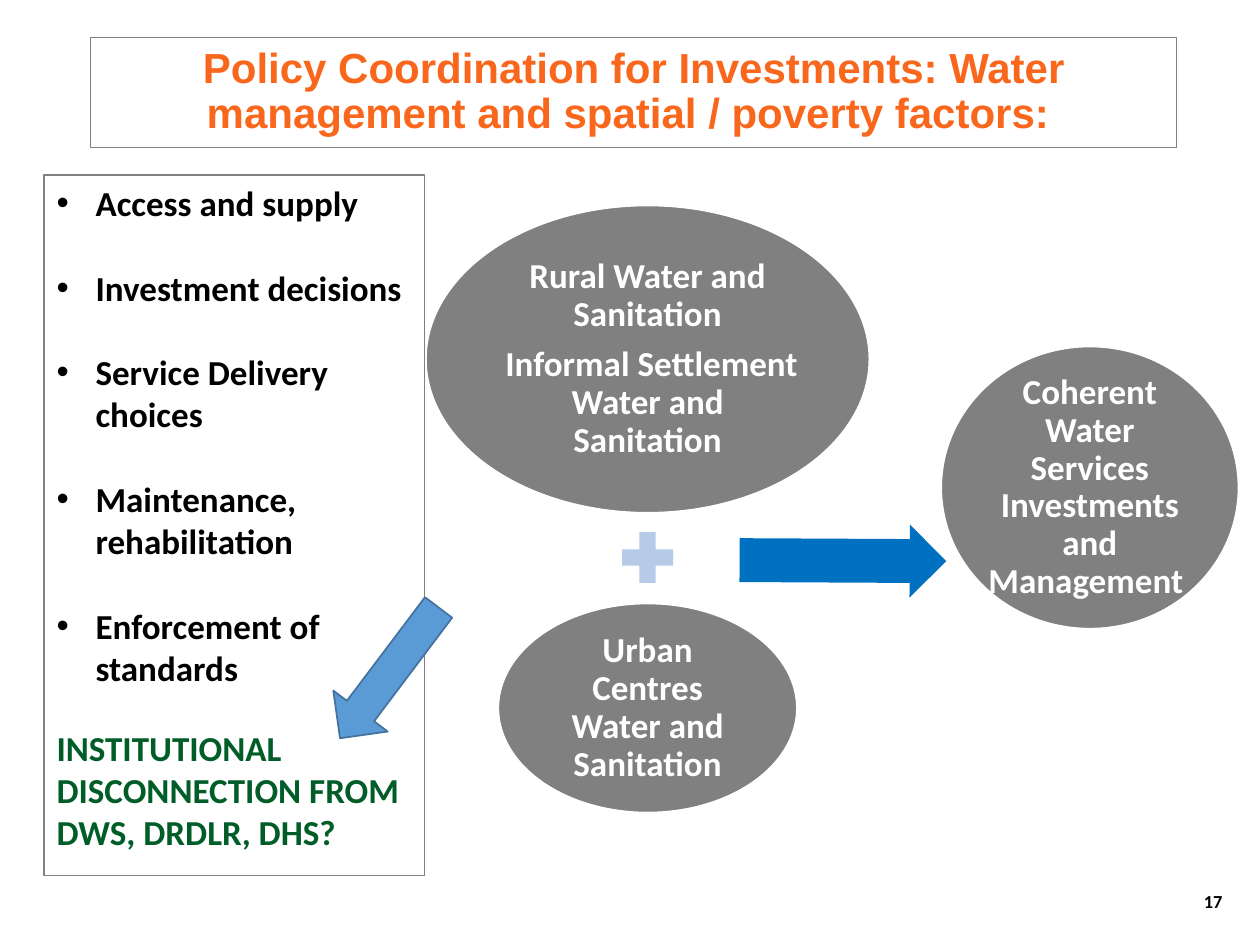
"""Build the slide on policy coordination for water investments."""
from lxml.etree import SubElement
from pptx import Presentation
from pptx.dml.color import RGBColor
from pptx.enum.shapes import MSO_SHAPE as Shape
from pptx.enum.text import MSO_ANCHOR as Anchor, PP_ALIGN as Align
from pptx.oxml.ns import qn
from pptx.util import Inches, Pt

COLORS = {
    "orange": "F9671C", "green": "005D28", "black": "000000", "white": "FFFFFF",
    "gray": "808080", "pale": "B5CBE7", "blue": "0070C0", "sky": "5B9BD5", "navy": "43739E",
}
TITLE = "Policy Coordination for Investments: Water management and spatial / poverty factors: "
ISSUES = [
    "Access and supply",
    "Investment decisions",
    "Service Delivery choices",
    "Maintenance, rehabilitation",
    "Enforcement of standards",
]
QUESTION = "INSTITUTIONAL DISCONNECTION FROM DWS, DRDLR, DHS?"
PAGE = "17"

WIDTH, HEIGHT = 10, 7.5
MIDDLE = 51.4
TITLE_AREA = (7.2, 4, 86.2, 11.6)
ISSUES_AREA = (3.5, 18.53, 30.2, 74.13)
PAGE_AREA = (93.5, 92.67, 4.5, 5.33)
SERVICES = [
    ((MIDDLE, 38), (35.2, 32.53),
     ["Rural Water and Sanitation", " Informal Settlement Water and Sanitation"]),
    ((MIDDLE, 74.93), (23.7, 22.13), ["Urban Centres Water and Sanitation"]),
    ((86.5, 51.6), (23.6, 29.87), ["Coherent Water Services Investments and Management "]),
]
SIGNS = [
    (Shape.MATH_PLUS, (MIDDLE, 59), (5.5, 7.33), 0, "pale", None),
    (Shape.RIGHT_ARROW, (66.9, 59.33), (16.4, 7.73), 0.3, "blue", None),
    (Shape.DOWN_ARROW, (30.9, 71.2), (5.4, 17.33), 37, "sky", "navy"),
]

LINE_GAP = 24.4
HANG = Inches(0.31)
BODY = {"name": "Calibri", "size": Pt(20), "bold": True}
HEADING = {"name": "Arial", "size": Pt(24), "bold": True}
NUMBER = {"name": "Calibri", "size": Pt(10.5), "bold": True}
CENTERED = {"alignment": Align.CENTER, "line_spacing": 0.9}
SIDES = ("margin_left", "margin_top", "margin_right", "margin_bottom")


def apply(target, values):
    for key, value in values.items():
        setattr(target, key, value)


def color(name):
    return RGBColor.from_string(COLORS[name])


def around(center, size):
    return (center[0] - size[0] / 2, center[1] - size[1] / 2, *size)


def place(slide, kind, area, fill=None, line=None, weight=1):
    left, top, width, height = area
    shape = slide.shapes.add_shape(
        kind,
        Inches(WIDTH * left / 100), Inches(HEIGHT * top / 100),
        Inches(WIDTH * width / 100), Inches(HEIGHT * height / 100),
    )
    shape.shadow.inherit = False
    for part, name in ((shape.fill, fill), (shape.line.fill, line)):
        if name:
            part.solid()
            part.fore_color.rgb = color(name)
        else:
            part.background()
    if line:
        shape.line.width = Pt(weight)
    return shape


def write(shape, texts, font, tint, layout, anchor=Anchor.MIDDLE, bullet=False):
    frame = shape.text_frame
    apply(frame, {"word_wrap": True, "vertical_anchor": anchor})
    for index, text in enumerate(texts):
        paragraph = frame.paragraphs[0] if index == 0 else frame.add_paragraph()
        if bullet:
            hang(paragraph)
        apply(paragraph, layout)
        run = paragraph.add_run()
        run.text = text
        apply(run.font, font)
        run.font.color.rgb = color(tint)
    return frame


def hang(paragraph):
    properties = paragraph._p.get_or_add_pPr()
    properties.set("marL", str(HANG))
    properties.set("indent", str(-HANG))
    SubElement(properties, qn("a:buFont"), typeface="Arial")
    SubElement(properties, qn("a:buChar"), char="•")


def add_issues(slide):
    panel = place(slide, Shape.RECTANGLE, ISSUES_AREA, line="gray", weight=0.75)
    frame = write(panel, ISSUES, BODY, "black",
                  {"alignment": Align.LEFT, "space_before": Pt(LINE_GAP)}, Anchor.TOP, True)
    frame.paragraphs[0].space_before = Pt(0)
    question = frame.add_paragraph()
    apply(question, {"alignment": Align.LEFT, "space_before": Pt(22)})
    run = question.add_run()
    run.text = QUESTION
    apply(run.font, BODY)
    run.font.color.rgb = color("green")


def main():
    deck = Presentation()
    apply(deck, {"slide_width": Inches(WIDTH), "slide_height": Inches(HEIGHT)})
    slide = deck.slides.add_slide(deck.slide_layouts[6])

    page = place(slide, Shape.RECTANGLE, PAGE_AREA)
    write(page, [PAGE], NUMBER, "black", {"alignment": Align.RIGHT})
    heading = place(slide, Shape.RECTANGLE, TITLE_AREA, line="gray", weight=0.75)
    write(heading, [TITLE], HEADING, "orange", CENTERED)

    for center, size, texts in SERVICES:
        service = place(slide, Shape.OVAL, around(center, size), "gray", "white")
        frame = write(service, texts, BODY, "white", CENTERED)
        apply(frame, dict.fromkeys(SIDES, Inches(0.03)))
        for paragraph in frame.paragraphs[:-1]:
            paragraph.space_after = Pt(7)

    add_issues(slide)
    for kind, center, size, turn, fill, line in SIGNS:
        sign = place(slide, kind, around(center, size), fill, line)
        sign.rotation = turn
        if kind == Shape.RIGHT_ARROW:
            sign.adjustments[0] = 0.6
    deck.save("out.pptx")


if __name__ == "__main__":
    main()
